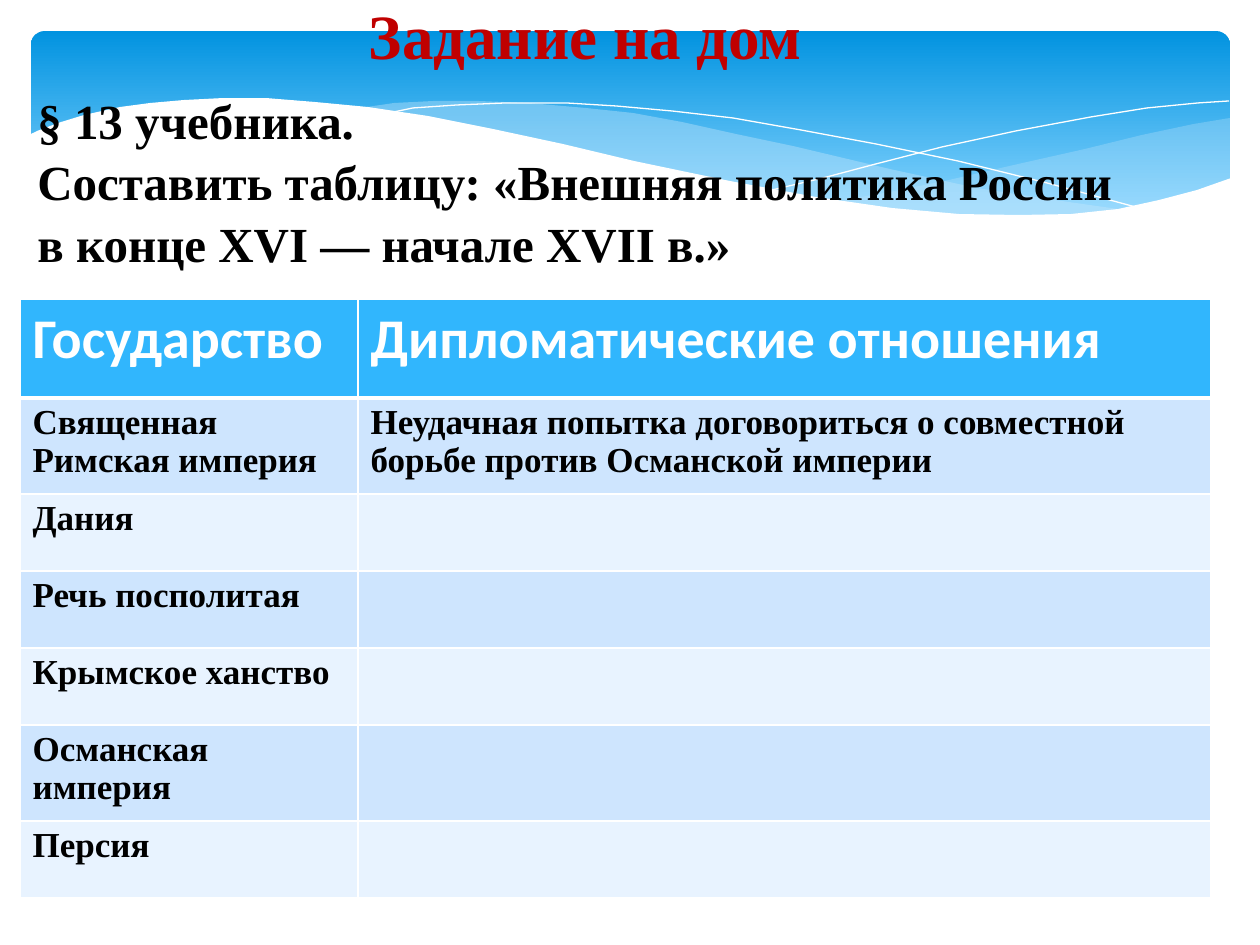
from lxml.etree import SubElement
from pptx import Presentation
from pptx.dml.color import RGBColor
from pptx.enum.shapes import MSO_SHAPE as Shape
from pptx.enum.text import MSO_ANCHOR as Anchor, PP_ALIGN as Align
from pptx.oxml.ns import qn
from pptx.util import Pt

PX = 914400 / 126
SERIF, SANS = "Times New Roman", "Calibri"
WHITE = RGBColor(0xFF, 0xFF, 0xFF)
BLACK = RGBColor(0x00, 0x00, 0x00)
RED = RGBColor(0xC0, 0x00, 0x00)
SKY_DARK = RGBColor(0x02, 0x93, 0xE0)
SKY_LIGHT = RGBColor(0x83, 0xD3, 0xFE)
WAVE = RGBColor(0xC6, 0xE7, 0xFC)
HEADER = RGBColor(0x31, 0xB6, 0xFD)
BANDS = [RGBColor(0xE8, 0xF3, 0xFF), RGBColor(0xCE, 0xE5, 0xFE)]

# Content
TITLE = "Задание на дом"
TASK = ["§ 13 учебника.",
        "Составить таблицу: «Внешняя политика России в конце XVI — начале XVII в.»"]
ROWS = [
    ("Государство", "Дипломатические отношения"),
    ("Священная Римская империя",
     "Неудачная попытка договориться о совместной борьбе против Османской империи"),
    ("Дания", ""),
    ("Речь посполитая", ""),
    ("Крымское ханство", ""),
    ("Османская империя", ""),
    ("Персия", ""),
]
COLUMN_WIDTHS = [338, 853]
ROW_HEIGHTS = [99, 96, 77, 77, 77, 96, 77]

# Wave outlines in px
RIGHT_WAVE = [
    (1230, 118), (1194, 124), (1142, 135), (1085, 149), (1014, 165), (949, 180),
    (890, 192), (833, 202), (871, 207), (922, 212), (969, 215), (1026, 217),
    (1076, 214), (1120, 209), (1160, 202), (1196, 192), (1230, 178)]
LONG_WAVE = [
    (1125, 210), (1055, 200), (977, 188), (890, 169), (793, 146), (736, 134),
    (682, 122), (633, 113), (586, 108), (529, 103), (479, 101), (433, 101),
    (394, 103), (360, 108), (407, 113), (456, 122), (509, 134), (566, 146),
    (668, 170), (736, 184), (799, 197), (857, 205), (910, 212), (959, 215),
    (1017, 218), (1068, 217)]
FALLING_LINE = [
    (389, 113), (413, 108), (457, 105), (505, 103), (567, 103), (616, 106),
    (672, 111), (733, 118), (801, 130), (876, 144), (958, 161), (1047, 183),
    (1143, 209)]
RISING_LINE = [
    (772, 190), (823, 178), (876, 164), (942, 147), (1016, 131), (1091, 117),
    (1147, 108), (1198, 103), (1229, 101)]
WHITE_WAVE = [
    (1231, 178), (1197, 190), (1159, 200), (1118, 209), (1071, 214), (1019, 215),
    (959, 214), (892, 208), (816, 197), (730, 181), (634, 161), (563, 144),
    (493, 129), (428, 116), (368, 107), (315, 102), (266, 98), (223, 98),
    (184, 100), (150, 103), (120, 107), (84, 115), (58, 123), (37, 131),
    (29, 135), (29, 282), (1231, 282)]


def px(*values):
    return [round(value * PX) for value in values]


def write(frame, lines, size, color, font=SERIF, align=Align.LEFT, spacing=None):
    frame.word_wrap = True
    frame.vertical_anchor = Anchor.TOP
    for index, line in enumerate(lines):
        paragraph = frame.paragraphs[0] if index == 0 else frame.add_paragraph()
        paragraph.alignment = align
        paragraph.line_spacing = spacing
        run = paragraph.add_run()
        run.text = line
        run.font.name, run.font.size, run.font.bold = font, Pt(size), True
        run.font.color.rgb = color


def add_wave(shapes, points, fill=None, opacity=100):
    builder = shapes.build_freeform(*points[0], scale=PX)
    builder.add_line_segments(points[1:], close=fill is not None)
    shape = builder.convert_to_shape()
    shape.shadow.inherit = False
    if fill is None:
        shape.fill.background()
        shape.line.color.rgb = WHITE
        shape.line.width = Pt(0)
        return
    shape.fill.solid()
    shape.fill.fore_color.rgb = fill
    if opacity < 100:
        color = shape.element.spPr.find(qn("a:solidFill"))[0]
        SubElement(color, qn("a:alpha"), val=str(opacity * 1000))
    shape.line.fill.background()


def set_borders(cell, bottom):
    properties = cell._tc.get_or_add_tcPr()
    for side, width in (("lnL", 1), ("lnR", 1), ("lnT", 1), ("lnB", bottom)):
        line = SubElement(properties, qn(f"a:{side}"), w=str(Pt(width)))
        fill = SubElement(line, qn("a:solidFill"))
        SubElement(fill, qn("a:srgbClr"), val=str(WHITE))


def main():
    presentation = Presentation()
    presentation.slide_width, presentation.slide_height = px(1260, 945)
    slide = presentation.slides.add_slide(presentation.slide_layouts[5])
    shapes = slide.shapes

    # Sky panel
    sky = shapes.add_shape(Shape.ROUNDED_RECTANGLE, *px(31, 31, 1199, 197))
    sky.adjustments[0] = 0.07
    sky.shadow.inherit = False
    sky.line.fill.background()
    sky.fill.gradient()
    sky.fill.gradient_angle = 270
    stops = zip(sky.fill.gradient_stops, (SKY_DARK, SKY_LIGHT), (0, 0.9))
    for stop, color, position in stops:
        stop.color.rgb, stop.position = color, position

    # Waves
    add_wave(shapes, RIGHT_WAVE, WAVE, 29)
    add_wave(shapes, LONG_WAVE, WAVE, 40)
    add_wave(shapes, FALLING_LINE)
    add_wave(shapes, RISING_LINE)
    add_wave(shapes, WHITE_WAVE, WHITE)

    # Title, brought in front of the waves
    title = shapes.title
    title.left, title.top, title.width, title.height = px(253, -14, 665, 89)
    write(title.text_frame, [TITLE], 36, RED, align=Align.CENTER, spacing=1.05)
    title.element.getparent().append(title.element)

    # Task
    task = shapes.add_textbox(*px(25, 81, 1131, 251))
    write(task.text_frame, TASK, 28, BLACK, spacing=1.05)

    # Table
    table = shapes.add_table(len(ROWS), len(COLUMN_WIDTHS), *px(
        20, 299, sum(COLUMN_WIDTHS), sum(ROW_HEIGHTS))).table
    for column, width in zip(table.columns, px(*COLUMN_WIDTHS)):
        column.width = width
    for row, height in zip(table.rows, px(*ROW_HEIGHTS)):
        row.height = height
    for r, texts in enumerate(ROWS):
        for c, text in enumerate(texts):
            cell = table.cell(r, c)
            set_borders(cell, bottom=1 if r else 3)
            cell.fill.solid()
            cell.fill.fore_color.rgb = BANDS[r % 2] if r else HEADER
            if not text:
                continue
            if r:
                write(cell.text_frame, [text], 20, BLACK, spacing=0.97)
            else:
                write(cell.text_frame, [text], 32, WHITE, font=SANS)

    presentation.save("out.pptx")


if __name__ == "__main__":
    main()
